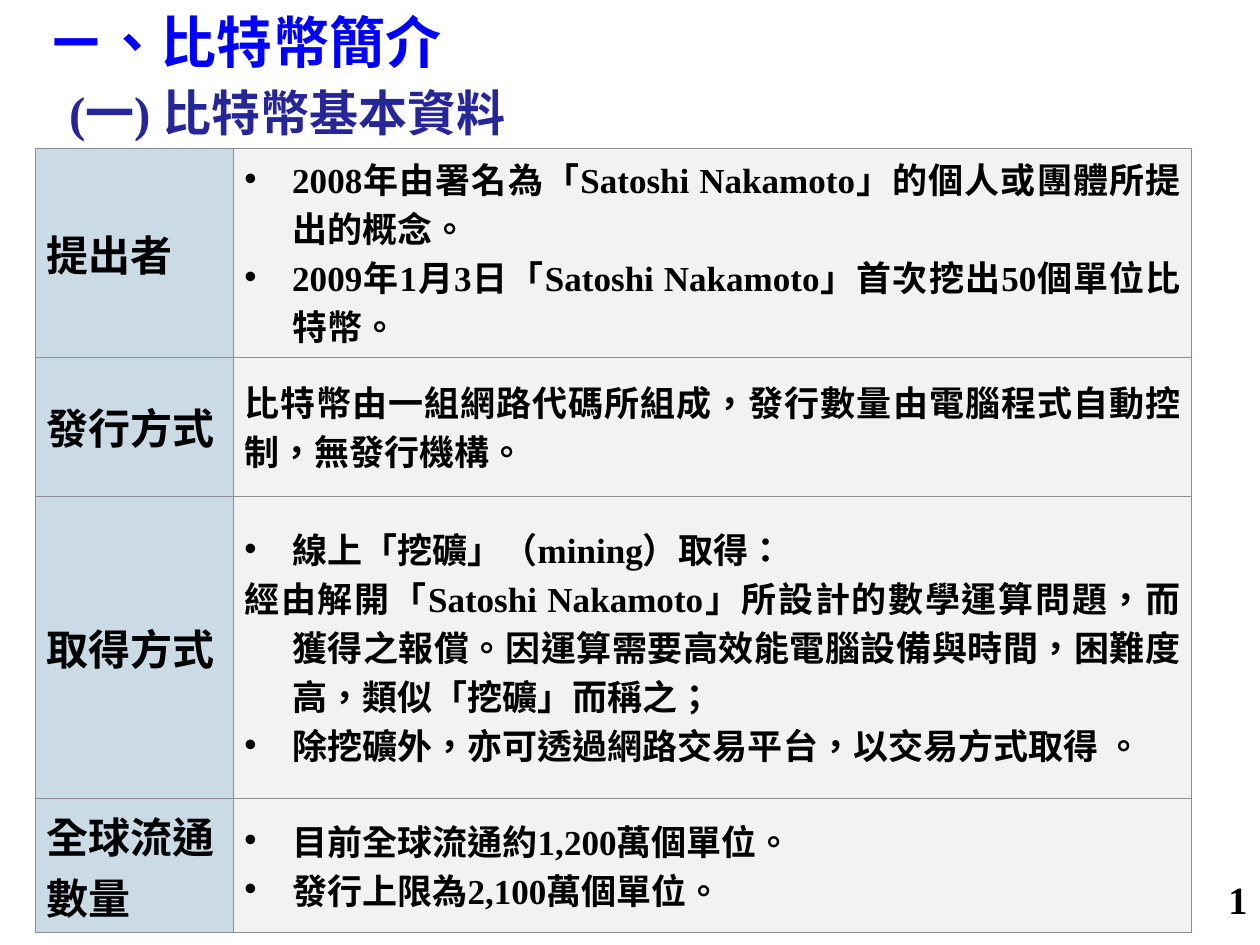
from pptx import Presentation
from pptx.dml.color import RGBColor
from pptx.enum.text import MSO_ANCHOR as Anchor, PP_ALIGN as Align
from pptx.oxml.ns import qn
from pptx.util import Inches, Pt
from lxml.etree import SubElement

LATIN, EAST_ASIAN, LANGUAGE = "Times New Roman", "Noto Sans CJK TC", "zh-TW"
BLACK, BLUE, NAVY = "000000", "0000FF", "262699"
LABEL_FILL, DETAIL_FILL, BORDER = "CADBE5", "F2F2F2", "968C8C"

TITLE = "ㄧ、比特幣簡介"
SUBTITLE = "(一) 比特幣基本資料"
PAGE_NUMBER = "1"

# Paragraph layouts: (left margin, first-line indent, bulleted)
BULLET, HANGING, PLAIN = (0.38, -0.38, True), (0.38, -0.38, False), (0, 0, False)

# Rows: height, label, detail paragraphs
ROWS = [
    (1.65, "提出者", [
        (BULLET, "2008年由署名為「Satoshi Nakamoto」的個人或團體所提出的概念。"),
        (BULLET, "2009年1月3日「Satoshi Nakamoto」首次挖出50個單位比特幣。"),
    ]),
    (1.1, "發行方式", [
        (PLAIN, "比特幣由一組網路代碼所組成，發行數量由電腦程式自動控制，無發行機構。"),
    ]),
    (2.4, "取得方式", [
        (BULLET, "線上「挖礦」（mining）取得："),
        (HANGING, "經由解開「Satoshi Nakamoto」所設計的數學運算問題，而獲得之報償。"
                  "因運算需要高效能電腦設備與時間，困難度高，類似「挖礦」而稱之；"),
        (BULLET, "除挖礦外，亦可透過網路交易平台，以交易方式取得 。"),
    ]),
    (1.06, "全球流通數量", [
        (BULLET, "目前全球流通約1,200萬個單位。"),
        (BULLET, "發行上限為2,100萬個單位。"),
    ]),
]
COLUMNS = [1.57, 7.61]


def color(value):
    return RGBColor.from_string(value)


def write(para, text, size, fill=BLACK, align=None, spacing=None):
    para.text = text
    para.alignment = align
    if spacing:
        para.line_spacing = Pt(spacing)
    for span in para.runs:
        span.font.size, span.font.bold, span.font.name = Pt(size), True, LATIN
        span.font.color.rgb = color(fill)
        props = span._r.get_or_add_rPr()
        props.set("lang", LANGUAGE)
        SubElement(props, qn("a:ea"), typeface=EAST_ASIAN)


def set_layout(para, left, indent, bulleted):
    props = para._p.get_or_add_pPr()
    props.set("marL", str(Inches(left)))
    props.set("indent", str(Inches(indent)))
    if bulleted:
        SubElement(props, qn("a:buFont"), typeface="Arial")
        SubElement(props, qn("a:buChar"), char="•")


def add_text(page, bounds, text, size, **style):
    box = page.shapes.add_textbox(*map(Inches, bounds))
    box.text_frame.word_wrap = True
    write(box.text_frame.paragraphs[0], text, size, **style)
    return box.text_frame


def style_cell(cell, fill):
    props = cell._tc.get_or_add_tcPr()
    for side in ("lnL", "lnR", "lnT", "lnB"):
        line = SubElement(props, qn(f"a:{side}"), w=str(Pt(0.5)))
        solid = SubElement(line, qn("a:solidFill"))
        SubElement(solid, qn("a:srgbClr"), val=BORDER)
    cell.fill.solid()
    cell.fill.fore_color.rgb = color(fill)
    cell.vertical_anchor = Anchor.MIDDLE
    cell.margin_left = cell.margin_right = Inches(0.09)
    cell.margin_top = cell.margin_bottom = Inches(0.05)


def add_facts(page):
    height = sum(row[0] for row in ROWS)
    frame = page.shapes.add_table(len(ROWS), len(COLUMNS), Inches(0.28), Inches(1.18),
                                  Inches(sum(COLUMNS)), Inches(height))
    table = frame.table
    table.first_row = table.horz_banding = False
    for column, width in zip(table.columns, COLUMNS):
        column.width = Inches(width)
    for row, (height, label, details) in zip(table.rows, ROWS):
        row.height = Inches(height)
        label_cell, detail_cell = row.cells
        style_cell(label_cell, LABEL_FILL)
        style_cell(detail_cell, DETAIL_FILL)
        write(label_cell.text_frame.paragraphs[0], label, 24)
        body = detail_cell.text_frame
        for index, (layout, text) in enumerate(details):
            para = body.add_paragraph() if index else body.paragraphs[0]
            write(para, text, 20, align=Align.JUSTIFY, spacing=28)
            set_layout(para, *layout)


def main():
    deck = Presentation()
    deck.slide_width, deck.slide_height = Inches(10), Inches(7.5)
    page = deck.slides.add_slide(deck.slide_layouts[6])

    # Title, raised within its box to clear the subtitle
    title = add_text(page, (0.29, 0.21, 9.65, 0.78), TITLE, 32, fill=BLUE)
    title.vertical_anchor = Anchor.MIDDLE
    title.margin_bottom = Inches(0.6)

    # Fact table, subtitle and page number
    add_facts(page)
    add_text(page, (0.45, 0.52, 9.53, 0.66), SUBTITLE, 28, fill=NAVY,
             align=Align.JUSTIFY, spacing=40)
    add_text(page, (7.92, 6.9, 2.08, 0.5), PAGE_NUMBER, 22, align=Align.RIGHT)

    deck.save("out.pptx")


if __name__ == "__main__":
    main()
